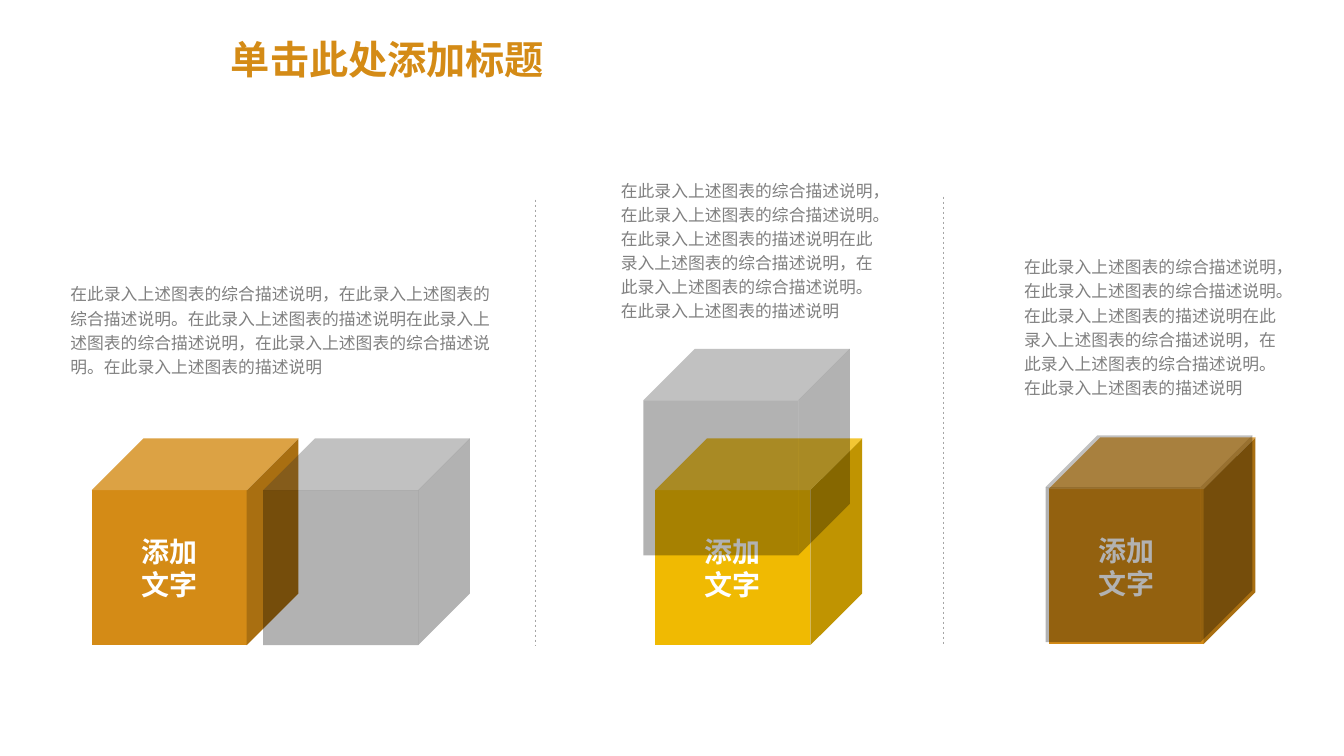
from typing import NamedTuple

from lxml import etree
from pptx import Presentation
from pptx.dml.color import RGBColor
from pptx.enum import dml, shapes, text
from pptx.oxml import ns
from pptx.util import Pt

PX = 9144  # 100 px to the inch
CUBE = 205
COLORS = {
    "orange": "D48B16",
    "yellow": "F0BA02",
    "shade": "000000",
    "white": "FFFFFF",
    "body": "808080",
    "rule": "A6A6A6",
}
CJK_FONT = "Noto Sans CJK SC"
LABEL = "添加\n文字"
DESCRIPTION = (
    "在此录入上述图表的综合描述说明，在此录入上述图表的综合描述说明。"
    "在此录入上述图表的描述说明在此录入上述图表的综合描述说明，"
    "在此录入上述图表的综合描述说明。在此录入上述图表的描述说明"
)


class Box(NamedTuple):
    x: int
    y: int
    w: int = CUBE
    h: int = CUBE

    def emu(self) -> list[int]:
        return [v * PX for v in self]


class Column(NamedTuple):
    color: str
    cube: Box
    shade: Box
    description: Box


class Divider(NamedTuple):
    x: int
    top: int
    bottom: int


COLUMNS = [
    Column("orange", Box(91, 435), Box(261, 435), Box(60, 273, 444, 107)),
    Column("yellow", Box(650, 435), Box(638, 346), Box(606, 170, 282, 156)),
    Column("orange", Box(1040, 434), Box(1037, 432), Box(1006, 246, 274, 156)),
]
DIVIDERS = [Divider(531, 198, 640), Divider(936, 195, 640)]


def rgb(name: str) -> RGBColor:
    return RGBColor.from_string(COLORS[name])


def write(tf, content: str, *, size: int, color: str, font: str, bold=False,
          align=None, spacing=None, anchor=None, wrap=True,
          fit=text.MSO_AUTO_SIZE.NONE) -> None:
    """Fill a text frame, one paragraph per line, in a single format."""
    tf.word_wrap = wrap
    tf.auto_size = fit
    tf.vertical_anchor = anchor
    for i, line in enumerate(content.split("\n")):
        p = tf.paragraphs[0] if i == 0 else tf.add_paragraph()
        p.alignment = align
        p.line_spacing = spacing
        r = p.add_run()
        r.text = line
        r.font.size = Pt(size)
        r.font.bold = bold
        r.font.color.rgb = rgb(color)
        r.font.name = font
        # East Asian typeface for the Chinese characters
        ea = etree.SubElement(r.font._element, ns.qn("a:ea"))
        ea.set("typeface", CJK_FONT)


def add_cube(s, box: Box, color: str, opacity: int = 100):
    sp = s.shapes.add_shape(shapes.MSO_SHAPE.CUBE, *box.emu())
    sp.adjustments[0] = 0.25
    sp.shadow.inherit = False
    sp.line.fill.background()
    sp.fill.solid()
    sp.fill.fore_color.rgb = rgb(color)
    if opacity < 100:
        clr = sp._element.spPr.find(".//" + ns.qn("a:srgbClr"))
        etree.SubElement(clr, ns.qn("a:alpha")).set("val", str(opacity * 1000))
    return sp


def add_column(s, column: Column) -> None:
    cube = add_cube(s, column.cube, column.color)
    write(cube.text_frame, LABEL, size=20, color="white", font=CJK_FONT,
          bold=True, align=text.PP_ALIGN.CENTER,
          anchor=text.MSO_ANCHOR.MIDDLE, wrap=False)
    add_cube(s, column.shade, "shade", opacity=30)
    box = s.shapes.add_textbox(*column.description.emu())
    write(box.text_frame, DESCRIPTION, size=12, color="body", font="Arial",
          spacing=1.2, fit=text.MSO_AUTO_SIZE.SHAPE_TO_FIT_TEXT)


def add_divider(s, d: Divider) -> None:
    line = s.shapes.add_connector(shapes.MSO_CONNECTOR.STRAIGHT, d.x * PX,
                                  d.top * PX, d.x * PX, d.bottom * PX)
    line.line.color.rgb = rgb("rule")
    line.line.width = Pt(0.5)
    line.line.dash_style = dml.MSO_LINE.DASH
    etree.SubElement(line._element.spPr, ns.qn("a:effectLst"))


def main() -> None:
    prs = Presentation()
    prs.slide_width, prs.slide_height = 1333 * PX, 750 * PX
    s = prs.slides.add_slide(prs.slide_layouts[5])

    # Title
    title = s.shapes.title
    title.left, title.top, title.width, title.height = Box(219, 34, 1114, 54).emu()
    write(title.text_frame, "单击此处添加标题", size=28, color="orange",
          font="Montserrat", bold=True, align=text.PP_ALIGN.LEFT,
          spacing=0.9, anchor=text.MSO_ANCHOR.MIDDLE)

    # Cube pairs with their descriptions
    for column in COLUMNS:
        add_column(s, column)

    # Dashed rules between the columns
    for divider in DIVIDERS:
        add_divider(s, divider)

    prs.save("out.pptx")


if __name__ == "__main__":
    main()
